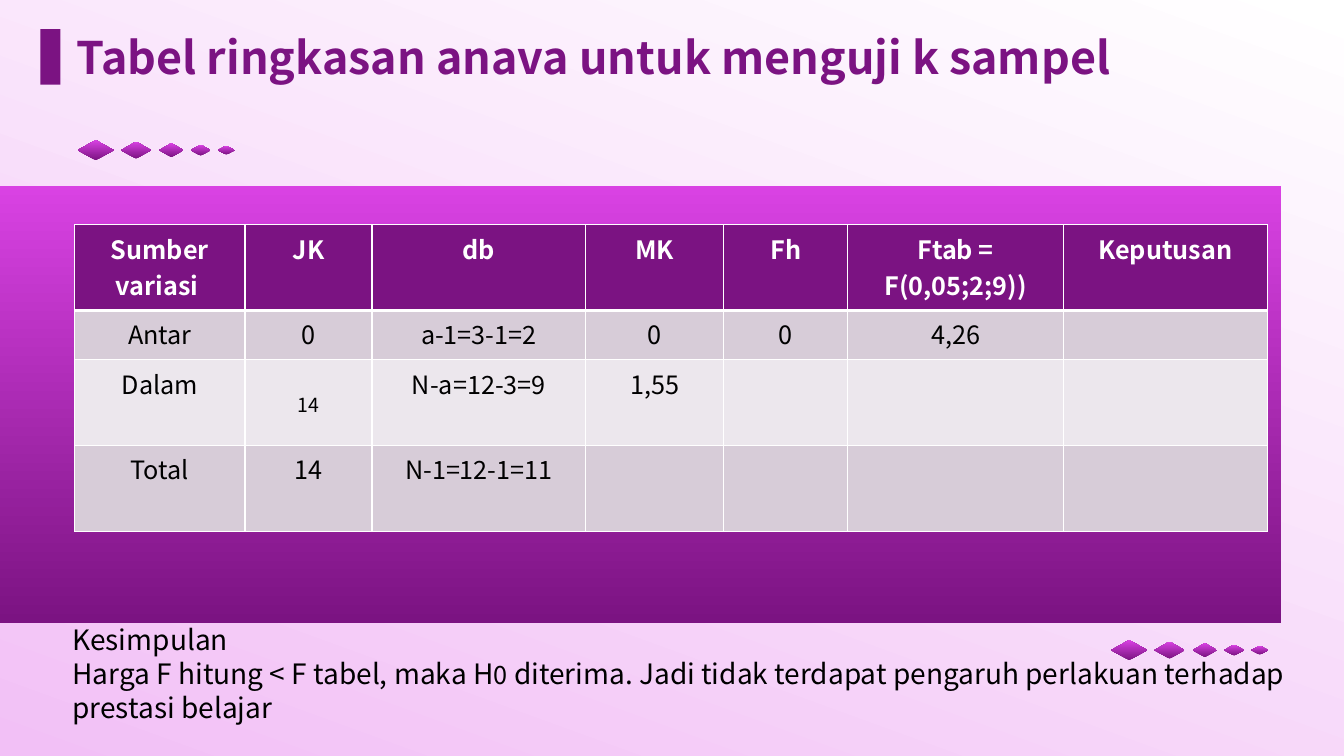
from dataclasses import dataclass
from typing import NamedTuple

from lxml import etree
from pptx import Presentation
from pptx.dml import color
from pptx.enum import shapes, text
from pptx.oxml import ns
from pptx.util import Inches, Pt


@dataclass(frozen=True)
class Theme:
    font: str = "Noto Sans CJK SC"
    purple: str = "7B1382"
    magenta: str = "D942E3"
    blush: str = "F2C0F6"
    white: str = "FFFFFF"
    black: str = "000000"
    band_dark: str = "D7CCD8"
    band_light: str = "ECE7ED"
    title: int = 32
    subscript: int = 24
    body: int = 20
    table: int = 18


class Box(NamedTuple):
    left: float
    top: float
    width: float
    height: float


class Style(NamedTuple):
    size: int
    color: str
    bold: bool = False
    subscript: bool = False


class Diamond(NamedTuple):
    offset: float
    width: float
    height: float


class Row(NamedTuple):
    height: float
    fill: str
    style: Style
    cells: tuple[str, ...]


THEME = Theme()
DIAMONDS = (
    Diamond(0, 0.36, 0.2),
    Diamond(0.43, 0.3, 0.17),
    Diamond(0.81, 0.24, 0.14),
    Diamond(1.12, 0.2, 0.11),
    Diamond(1.39, 0.17, 0.09),
)
HEADING = Style(THEME.table, THEME.white, bold=True)
ENTRY = Style(THEME.table, THEME.black)
LOWERED = Style(THEME.subscript, THEME.black, subscript=True)
CONCLUSION = Style(THEME.body, THEME.black)
COLUMNS = (1.69, 1.26, 2.12, 1.37, 1.23, 2.14, 2.02)
ANOVA = (
    Row(0.85, THEME.purple, HEADING,
        ("Sumber variasi ", "JK", "db", "MK", "Fh", "Ftab =\nF(0,05;2;9))", "Keputusan")),
    Row(0.49, THEME.band_dark, ENTRY,
        ("Antar", "0", "a-1=3-1=2", "0", "0", "4,26", "")),
    Row(0.85, THEME.band_light, ENTRY,
        ("Dalam", "14", "N-a=12-3=9", "1,55", "", "", "")),
    Row(0.85, THEME.band_dark, ENTRY,
        ("Total", "14", "N-1=12-1=11", "", "", "", "")),
)
STYLE_EXCEPTIONS = {(2, 1): LOWERED}


def rgb(value: str) -> color.RGBColor:
    return color.RGBColor.from_string(value)


def inches(box: Box) -> list[int]:
    return [Inches(length) for length in box]


def add_run(paragraph, wording: str, style: Style) -> None:
    run = paragraph.add_run()
    run.text = wording
    run.font.name = THEME.font
    run.font.size = Pt(style.size)
    run.font.bold = style.bold
    run.font.color.rgb = rgb(style.color)
    if style.subscript:
        run.font._element.set("baseline", "-25000")


def add_panel(slide, kind: shapes.MSO_SHAPE, box: Box, start: str,
              end: str | None = None, angle: int = 90) -> None:
    panel = slide.shapes.add_shape(kind, *inches(box))
    panel.shadow.inherit = False
    panel.line.fill.background()
    if end is None:
        panel.fill.solid()
        panel.fill.fore_color.rgb = rgb(start)
        return
    panel.fill.gradient()
    panel.fill.gradient_angle = angle
    for stop, position, tone in zip(panel.fill.gradient_stops, (0, 1), (start, end)):
        stop.position = position
        stop.color.rgb = rgb(tone)


def add_diamonds(slide, left: float, middle: float) -> None:
    for diamond in DIAMONDS:
        box = Box(left + diamond.offset, middle - diamond.height / 2,
                  diamond.width, diamond.height)
        add_panel(slide, shapes.MSO_SHAPE.DIAMOND, box, THEME.purple, THEME.magenta)


def add_frame(slide, box: Box):
    frame = slide.shapes.add_textbox(*inches(box)).text_frame
    frame.word_wrap = True
    return frame


def add_title(slide) -> None:
    frame = add_frame(slide, Box(0.76, 0.33, 11.64, 0.47))
    frame.margin_left = frame.margin_right = frame.margin_top = frame.margin_bottom = 0
    frame.vertical_anchor = text.MSO_ANCHOR.MIDDLE
    add_run(frame.paragraphs[0], "Tabel ringkasan anava untuk menguji k sampel",
            Style(THEME.title, THEME.purple, bold=True))


def add_conclusion(slide) -> None:
    frame = add_frame(slide, Box(0.62, 6.13, 12.75, 1.11))
    label, finding = frame.paragraphs[0], frame.add_paragraph()
    add_run(label, "Kesimpulan", CONCLUSION)
    add_run(finding, "Harga F hitung < F tabel, maka H", CONCLUSION)
    add_run(finding, "0", ENTRY)
    add_run(finding, " diterima. Jadi tidak terdapat pengaruh perlakuan terhadap prestasi belajar",
            CONCLUSION)


def add_borders(cell, top: int, bottom: int) -> None:
    properties = cell._tc.get_or_add_tcPr()
    for side, width in (("L", 1), ("R", 1), ("T", top), ("B", bottom)):
        border = etree.SubElement(properties, ns.qn(f"a:ln{side}"), w=str(Pt(width)))
        fill = etree.SubElement(border, ns.qn("a:solidFill"))
        etree.SubElement(fill, ns.qn("a:srgbClr"), val=THEME.white)


def add_anova(slide) -> None:
    box = Box(0.74, 2.23, sum(COLUMNS), sum(row.height for row in ANOVA))
    table = slide.shapes.add_table(len(ANOVA), len(COLUMNS), *inches(box)).table
    for column, width in zip(table.columns, COLUMNS):
        column.width = Inches(width)
    for r, row in enumerate(ANOVA):
        table.rows[r].height = Inches(row.height)
        for c, wording in enumerate(row.cells):
            cell = table.cell(r, c)
            add_borders(cell, top=3 if r == 1 else 1, bottom=3 if r == 0 else 1)
            cell.fill.solid()
            cell.fill.fore_color.rgb = rgb(row.fill)
            frame = cell.text_frame
            for n, line in enumerate(wording.split("\n") if wording else []):
                paragraph = frame.add_paragraph() if n else frame.paragraphs[0]
                paragraph.alignment = text.PP_ALIGN.CENTER
                add_run(paragraph, line, STYLE_EXCEPTIONS.get((r, c), row.style))


def main() -> None:
    deck = Presentation()
    deck.slide_width, deck.slide_height = Inches(13.33), Inches(7.5)
    slide = deck.slides.add_slide(deck.slide_layouts[6])
    rectangle = shapes.MSO_SHAPE.RECTANGLE
    add_panel(slide, rectangle, Box(0, 0, 13.33, 7.5), THEME.blush, THEME.white, angle=70)
    add_panel(slide, rectangle, Box(0, 1.85, 12.71, 4.33), THEME.purple, THEME.magenta)
    add_diamonds(slide, left=0.77, middle=1.49)
    add_diamonds(slide, left=11.02, middle=6.45)
    add_title(slide)
    add_panel(slide, rectangle, Box(0.4, 0.29, 0.2, 0.55), THEME.purple)
    add_conclusion(slide)
    add_anova(slide)
    deck.save("out.pptx")


if __name__ == "__main__":
    main()
